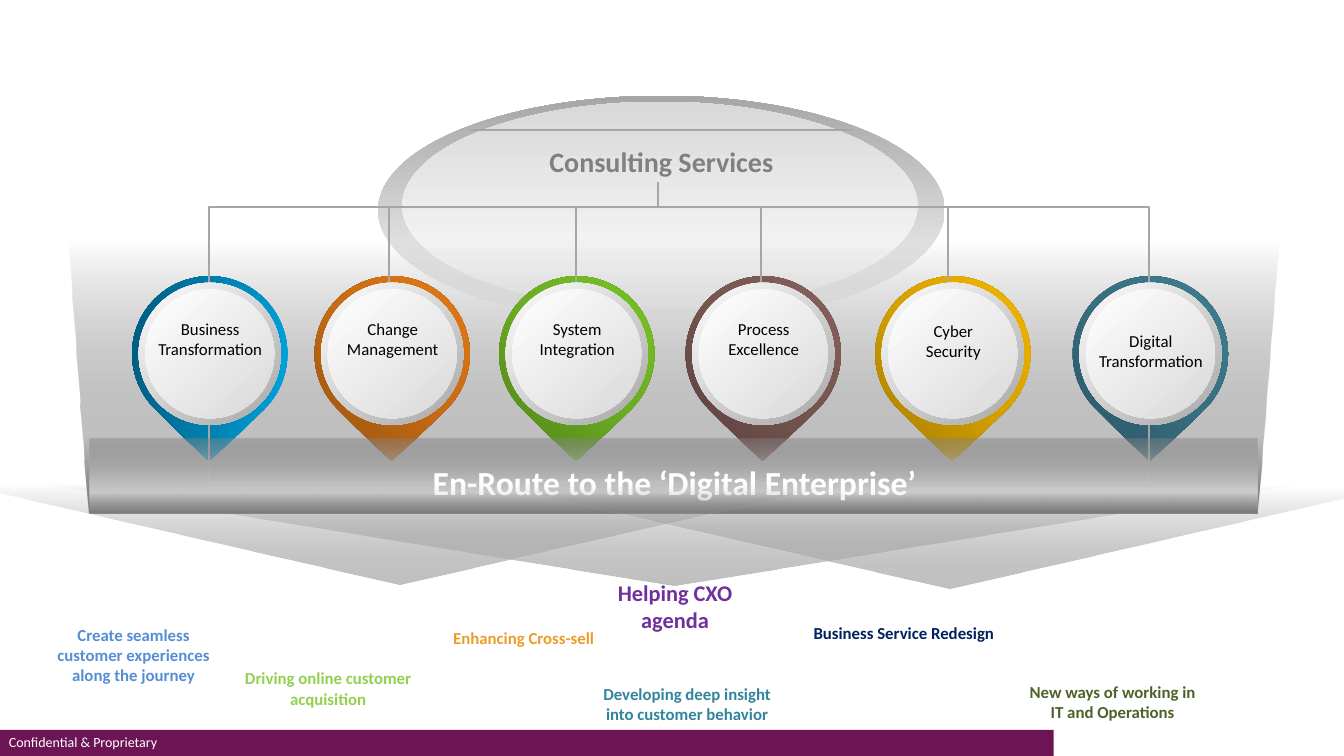
from lxml import etree
from pptx import Presentation
from pptx.dml.color import RGBColor
from pptx.enum import shapes, text
from pptx.oxml import ns
from pptx.util import Inches, Pt

GREY = "A6A6A6"
PINS = [
    ("Business\nTransformation", 2.08, 3.11, [(0, "00B0F0"), (100, "004D6A")], 50),
    ("Change\nManagement", 3.89, 3.11, [(0, "8C4C0E"), (50, "C86C14"), (100, "ED8018")], 180),
    ("System\nIntegration", 5.72, 3.11, [(0, "4B7918"), (50, "6BAD23"), (100, "7ECD29")], 180),
    ("Process\nExcellence", 7.57, 3.11, [(0, "533C39"), (50, "775551"), (100, "8D6560")], 180),
    ("Cyber\nSecurity", 9.45, 3.13, [(0, "977200"), (50, "D7A200"), (100, "FFC000")], 180),
    ("Digital\nTransformation", 11.41, 3.23, [(0, "274E5B"), (50, "386F82"), (100, "42849A")], 180),
]
GOALS = [
    ("Create seamless customer experiences along the journey", 0.33, 6.15, 0.71, "558ED5"),
    ("Driving online customer\nacquisition", 2.26, 6.58, 0.5, "92D050"),
    ("Enhancing Cross-sell", 4.2, 6.18, 0.3, "EA9D29"),
    ("Developing deep insight into customer behavior", 5.82, 6.73, 0.5, "31859C"),
    ("Business Service Redesign", 7.97, 6.13, 0.5, "002060"),
    ("New ways of working in IT and Operations", 10.04, 6.71, 0.5, "4F6228"),
]
PANEL = [(0.88, 5.08), (0.68, 2.4), (12.68, 2.4), (12.47, 5.05)]
PANEL_FADE = [(0, "6F6F6F"), (29, "C0C0C0"), (100, "828282", 0)]
BAND_FADE = [(0, "6F6F6F"), (29, "D1D1D1"), (100, "828282", 43)]
ARROW_FADE = [(0, "828282", 0), (100, "BFBFBF")]
RIM = [(0, "FFFFFF"), (100, GREY)]
FACE = [(0, "FFFFFF"), (100, "D9D9D9")]
DROPS = [(3.86, 2.05, 2.8), (5.71, 2.05, 2.81), (7.55, 2.06, 2.82), (9.4, 2.06, 2.82)]
PIN_Y = 3.51

prs = Presentation()
prs.slide_width, prs.slide_height = Inches(13.33), Inches(7.5)
s = prs.slides.add_slide(prs.slide_layouts[6])
KIND = shapes.MSO_SHAPE


def rgb(value):
    return RGBColor.from_string(value)


def fade(sp, stops, angle):
    sp.fill.gradient()
    grad = sp._element.spPr.find(ns.qn("a:gradFill"))
    for child in list(grad):
        grad.remove(child)
    grad.set("rotWithShape", "1")
    stop_list = etree.SubElement(grad, ns.qn("a:gsLst"))
    for pos, color, *alpha in stops:
        gs = etree.SubElement(stop_list, ns.qn("a:gs"), pos=str(pos * 1000))
        clr = etree.SubElement(gs, ns.qn("a:srgbClr"), val=color)
        for a in alpha:
            etree.SubElement(clr, ns.qn("a:alpha"), val=str(a * 1000))
    etree.SubElement(grad, ns.qn("a:lin"), ang=str(angle * 60000), scaled="0")


def finish(sp, fill=None, angle=270, line=None):
    sp.shadow.inherit = False
    if isinstance(fill, list):
        fade(sp, fill, angle)
    elif fill:
        sp.fill.solid()
        sp.fill.fore_color.rgb = rgb(fill)
    else:
        sp.fill.background()
    if line:
        sp.line.color.rgb = rgb(line)
        sp.line.width = Pt(1.5)
    else:
        sp.line.fill.background()
    return sp


def add_shape(kind, x, y, w, h, rotation=0, **look):
    sp = s.shapes.add_shape(kind, Inches(x), Inches(y), Inches(w), Inches(h))
    sp.rotation = rotation
    return finish(sp, **look)


def add_disc(cx, cy, size, fill):
    add_shape(KIND.OVAL, cx - size / 2, cy - size / 2, size, size, fill=fill, angle=50)


def add_line(x1, y1, x2, y2, width=1.5):
    c = s.shapes.add_connector(shapes.MSO_CONNECTOR.STRAIGHT,
                               Inches(x1), Inches(y1), Inches(x2), Inches(y2))
    c.line.color.rgb = rgb(GREY)
    c.line.width = Pt(width)
    etree.SubElement(c._element.spPr, ns.qn("a:effectLst"))


def add_text(words, x, y, w, h, size=12, color="000000", bold=False, align="CENTER"):
    tf = s.shapes.add_textbox(Inches(x), Inches(y), Inches(w), Inches(h)).text_frame
    tf.word_wrap = True
    tf.auto_size = text.MSO_AUTO_SIZE.SHAPE_TO_FIT_TEXT
    for i, row in enumerate(words.split("\n")):
        p = tf.paragraphs[0] if i == 0 else tf.add_paragraph()
        p.alignment = getattr(text.PP_ALIGN, align)
        r = p.add_run()
        r.text = row
        r.font.name, r.font.size, r.font.bold = "Calibri", Pt(size), bold
        r.font.color.rgb = rgb(color)


def add_arrow(x, y, w):
    add_shape(KIND.ISOSCELES_TRIANGLE, x, y, w, 1, rotation=180, fill=ARROW_FADE)


add_shape(KIND.RECTANGLE, 0, 7.24, 10.45, 0.26, fill="6D1554")
add_text("Confidential & Proprietary", -0.01, 7.23, 3.34, 0.27,
         size=10, color="FFFFFF", align="LEFT")

add_arrow(0.46, 4.81, 12.44)
add_shape(KIND.OVAL, 3.75, 0.95, 5.62, 2.27, fill=RIM)
add_shape(KIND.OVAL, 3.99, 1.01, 5.11, 2.06, fill=FACE)

corners = [(Inches(x), Inches(y)) for x, y in PANEL]
builder = s.shapes.build_freeform(*corners[0])
builder.add_line_segments(corners[1:], close=True)
finish(builder.convert_to_shape(), fill=PANEL_FADE)

for _, cx, _, stops, angle in PINS:
    pin = add_shape(KIND.TEAR, cx - 0.77, PIN_Y - 0.77, 1.54, 1.54,
                    rotation=135.4, fill=stops, angle=angle)
    pin.adjustments[0] = 0.975

add_text("Consulting Services", 3.75, 1.38, 5.62, 0.44, size=20, color="808080", bold=True)
add_shape(KIND.RECTANGLE, 2.07, 2.05, 9.33, 2.74, line=GREY)
for x, top, bottom in DROPS:
    add_line(x, top, x, bottom)

for label, cx, label_y, _, _ in PINS:
    add_disc(cx, PIN_Y, 1.41, RIM)
    add_disc(cx, PIN_Y, 1.28, FACE)
    add_text(label, cx - 1, label_y, 2.01, 0.5)

add_shape(KIND.RECTANGLE, 0.89, 4.35, 11.58, 0.74, fill=BAND_FADE)
add_text("En-Route to the ‘Digital Enterprise’", 0.89, 4.53, 11.6, 0.5,
         size=24, color="FFFFFF", bold=True)
add_text("Helping CXO agenda", 5.7, 5.7, 1.99, 0.64, size=16, color="7030A0", bold=True)

add_arrow(-0.44, 4.8, 8.8)
add_arrow(5.01, 4.84, 8.8)
add_line(6.53, 1.81, 6.53, 2.05)
add_line(4.67, 1.29, 8.45, 1.29, width=0.75)

for goal, x, y, h, color in GOALS:
    add_text(goal, x, y, 1.99, h, color=color, bold=True)

prs.save("out.pptx")
